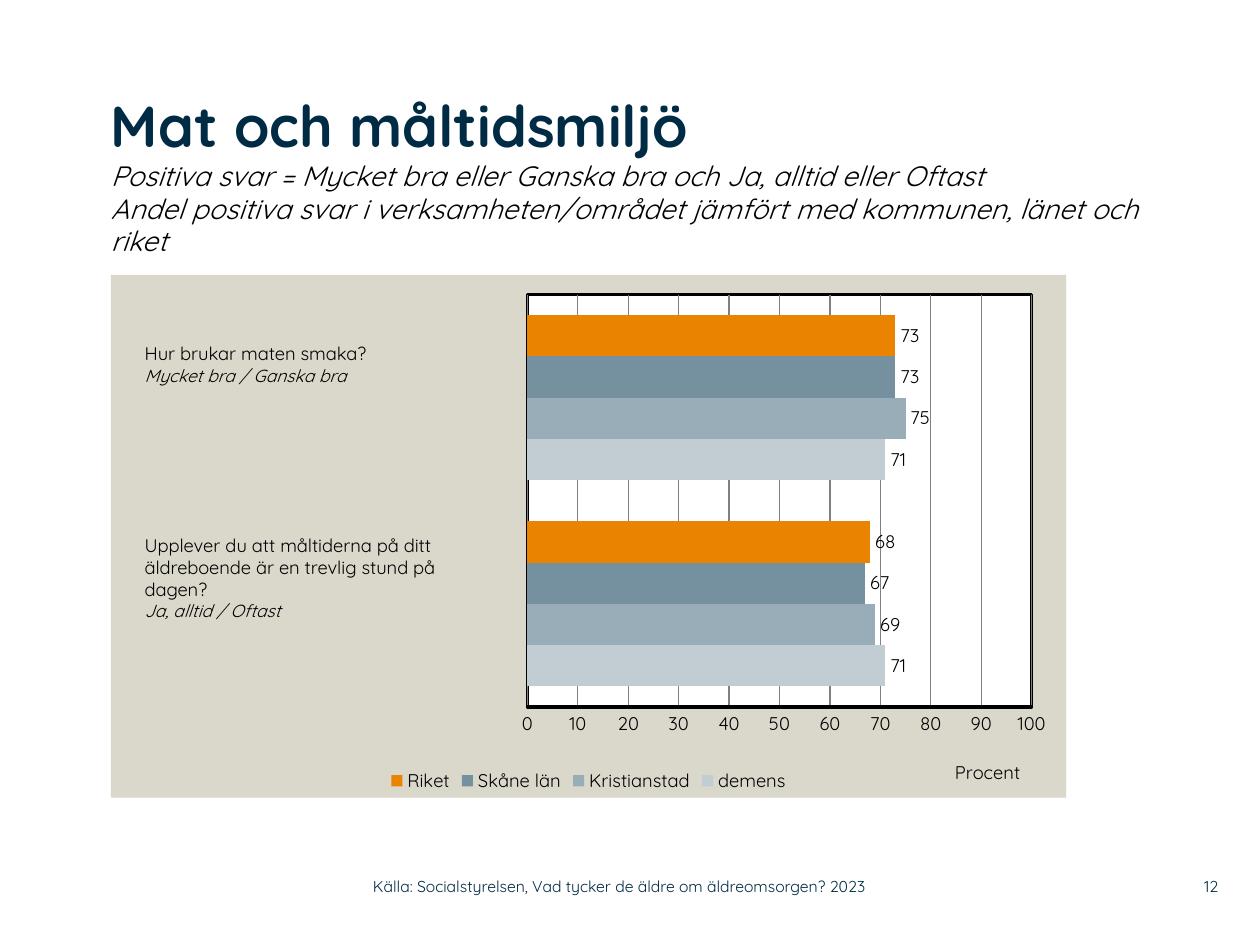
import pptx
import pptx.util
import pptx.chart.data
import pptx.dml.color
import pptx.enum.chart
import pptx.enum.text
import pptx.oxml
import pptx.oxml.ns

Pt = pptx.util.Pt
FONT = "Quicksand"
NAVY, BLACK, WHITE, SAND, GREY = "002B45", "000000", "FFFFFF", "DAD7CB", "808080"
NAMESPACES = pptx.oxml.ns.nsdecls("c", "a")

SERIES = [
    ("demens", (71, 71), "C2CDD3"),
    ("Kristianstad", (69, 75), "99ADB9"),
    ("Skåne län", (67, 73), "75909F"),
    ("Riket", (68, 73), "E98300"),
]


def colour(hex_code):
    return pptx.dml.color.RGBColor.from_string(hex_code)


def set_values(target, values):
    for name, value in values.items():
        setattr(target, name, value)


def set_font(font, size, hex_code=BLACK, bold=False, italic=False):
    set_values(font, {"name": FONT, "size": Pt(size), "bold": bold, "italic": italic})
    font.color.rgb = colour(hex_code)


def add_text(page, box, paragraphs, inset=None, anchor="TOP", align="LEFT"):
    """Text box; each paragraph is (text, size, colour, italic)."""
    frame = page.shapes.add_textbox(*map(Pt, box)).text_frame
    frame.word_wrap = True
    frame.vertical_anchor = getattr(pptx.enum.text.MSO_ANCHOR, anchor)
    if inset is not None:
        sides = ("left", "top", "right", "bottom")
        set_values(frame, {f"margin_{side}": Pt(inset) for side in sides})
    for index, (text, size, hex_code, italic) in enumerate(paragraphs):
        para = frame.add_paragraph() if index else frame.paragraphs[0]
        para.alignment = getattr(pptx.enum.text.PP_ALIGN, align)
        span = para.add_run()
        span.text = text
        set_font(span.font, size, hex_code, italic=italic)


def add_heading(page, box):
    title = page.shapes.title
    set_values(title, dict(zip(("left", "top", "width", "height"), map(Pt, box))))
    frame = title.text_frame
    set_values(frame, {
        "margin_left": 0, "margin_top": 0, "margin_right": 0, "margin_bottom": 0,
        "word_wrap": True,
        "vertical_anchor": pptx.enum.text.MSO_ANCHOR.TOP,
        "auto_size": pptx.enum.text.MSO_AUTO_SIZE.NONE,
    })
    para = frame.paragraphs[0]
    set_values(para, {"alignment": pptx.enum.text.PP_ALIGN.LEFT, "line_spacing": 0.97})
    lines = [
        ("Mat och måltidsmiljö", {"size": 33, "hex_code": NAVY, "bold": True}),
        ("Positiva svar = Mycket bra eller Ganska bra och Ja, alltid eller Oftast",
         {"size": 16, "italic": True}),
        ("Andel positiva svar i verksamheten/området jämfört med kommunen, länet och riket",
         {"size": 16, "italic": True}),
    ]
    for index, (text, style) in enumerate(lines):
        if index:
            para.add_line_break()
        span = para.add_run()
        span.text = text
        set_font(span.font, **style)


def area_format(fill, line=None):
    """Fill and border for the chart area or the plot area."""
    border = (f'<a:ln w="{Pt(2)}"><a:solidFill><a:srgbClr val="{line}"/></a:solidFill></a:ln>'
              if line else "<a:ln><a:noFill/></a:ln>")
    return pptx.oxml.parse_xml(
        f'<c:spPr {NAMESPACES}><a:solidFill><a:srgbClr val="{fill}"/></a:solidFill>'
        f"{border}</c:spPr>")


def set_layout(parent, position, target=None, **fractions):
    """Place a chart part by fractions of the chart area."""
    for old in parent.findall(pptx.oxml.ns.qn("c:layout")):
        parent.remove(old)
    parts = f'<c:layoutTarget val="{target}"/>' if target else ""
    parts += '<c:xMode val="edge"/><c:yMode val="edge"/>'
    parts += "".join(f'<c:{key} val="{value}"/>' for key, value in fractions.items())
    parent.insert(position, pptx.oxml.parse_xml(
        f"<c:layout {NAMESPACES}><c:manualLayout>{parts}</c:manualLayout></c:layout>"))


def add_bar_chart(page, box):
    chart_enum = pptx.enum.chart
    data = pptx.chart.data.CategoryChartData()
    data.categories = ["1", "2"]
    for name, values, _ in SERIES:
        data.add_series(name, values)
    chart = page.shapes.add_chart(
        chart_enum.XL_CHART_TYPE.BAR_CLUSTERED, *map(Pt, box), data).chart
    set_values(chart, {"has_title": False, "has_legend": True})
    set_font(chart.font, 10.5)
    set_values(chart.legend, {
        "position": chart_enum.XL_LEGEND_POSITION.BOTTOM, "include_in_layout": False})
    set_font(chart.legend.font, 10.5)

    # Bars and value labels
    plot = chart.plots[0]
    set_values(plot, {"gap_width": 100, "overlap": 0, "vary_by_categories": False})
    for series, (_, _, hex_code) in zip(plot.series, SERIES):
        series.format.fill.solid()
        series.format.fill.fore_color.rgb = colour(hex_code)
        labels = series.data_labels
        set_values(labels, {
            "show_value": True, "position": chart_enum.XL_LABEL_POSITION.OUTSIDE_END})
        set_font(labels.font, 10.5)

    # Axes
    chart.category_axis.visible = False
    axis = chart.value_axis
    set_values(axis, {
        "minimum_scale": 0, "maximum_scale": 100, "major_unit": 10,
        "major_tick_mark": chart_enum.XL_TICK_MARK.NONE,
        "minor_tick_mark": chart_enum.XL_TICK_MARK.NONE,
        "has_major_gridlines": True,
    })
    set_font(axis.tick_labels.font, 10.5)
    for line, hex_code, width in ((axis.format.line, BLACK, 2),
                                  (axis.major_gridlines.format.line, GREY, 0.75)):
        line.color.rgb = colour(hex_code)
        line.width = Pt(width)
    span = axis.axis_title.text_frame.paragraphs[0].add_run()
    span.text = "Procent"
    set_font(span.font, 10.5)
    set_layout(axis.axis_title._element, 1, x=0.88, y=0.92)

    # Chart area and plot area
    chart_part = chart._chartSpace.find(pptx.oxml.ns.qn("c:chart"))
    chart_part.addnext(area_format(SAND))
    plot_area = chart_part.find(pptx.oxml.ns.qn("c:plotArea"))
    set_layout(plot_area, 0, target="inner", x=0.436, y=0.038, w=0.528, h=0.789)
    plot_area.append(area_format(WHITE, BLACK))


def add_questions(page, box):
    left, top, width, height = box
    questions = [
        (0, 45, ["Hur brukar maten smaka?"], "Mycket bra / Ganska bra"),
        (109.5, 70.5,
         ["Upplever du att måltiderna på ditt äldreboende är en trevlig stund på", "dagen?"],
         "Ja, alltid / Oftast"),
    ]
    for offset, part_height, lines, answer in questions:
        paragraphs = [(text, 10.5, BLACK, False) for text in lines]
        paragraphs.append((answer, 10, BLACK, True))
        add_text(page, (left, top + offset, width, part_height), paragraphs)


def add_footer(page, box):
    left, top, width, height = box
    parts = [
        (0, 319, "Källa: Socialstyrelsen, Vad tycker de äldre om äldreomsorgen? 2023", "LEFT"),
        (width - 34, 34, "12", "RIGHT"),
    ]
    for offset, part_width, text, align in parts:
        add_text(page, (left + offset, top, part_width, height),
                 [(text, 9, NAVY, False)], inset=0, anchor="MIDDLE", align=align)


def main():
    deck = pptx.Presentation()
    set_values(deck, {"slide_width": Pt(720), "slide_height": Pt(540)})
    page = deck.slides.add_slide(deck.slide_layouts[5])
    add_bar_chart(page, (63.4, 157, 545.8, 298.8))
    add_heading(page, (63.4, 53.3, 606.2, 103.7))
    add_questions(page, (75.6, 192.2, 199.4, 180))
    add_footer(page, (213.1, 496.1, 483.1, 20.9))
    deck.save("out.pptx")


if __name__ == "__main__":
    main()
